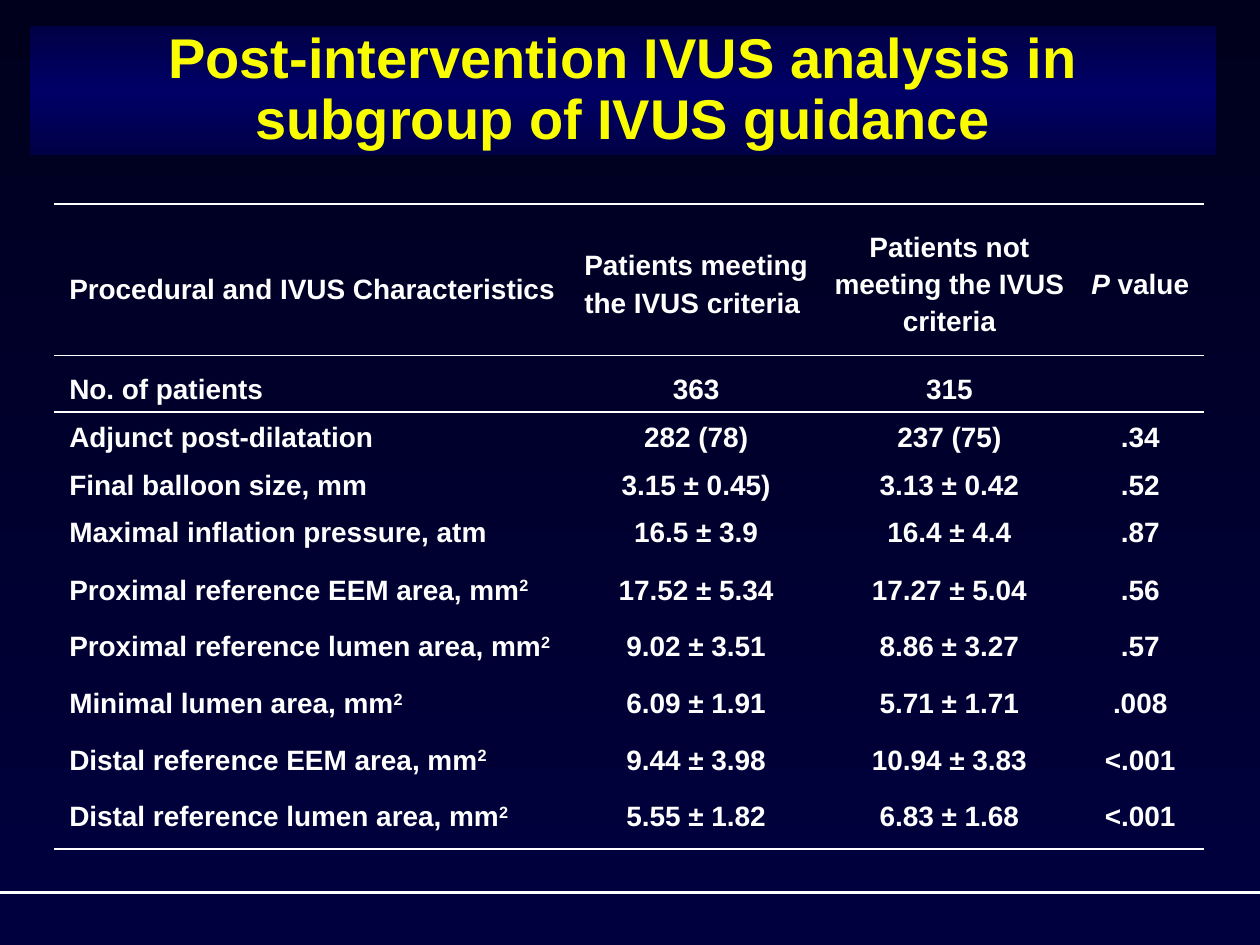
from typing import NamedTuple

from lxml.etree import SubElement
from pptx import Presentation
from pptx.dml.color import RGBColor
from pptx.enum.shapes import MSO_CONNECTOR
from pptx.enum.text import MSO_ANCHOR, MSO_AUTO_SIZE, PP_ALIGN
from pptx.oxml import parse_xml
from pptx.oxml.ns import nsdecls, qn
from pptx.util import Inches, Pt

FONT = "Arial"
WHITE = "FFFFFF"
YELLOW = "FAFD00"
NO_STYLE_NO_GRID = "{2D5ABB26-0587-4C30-8999-92F81FD0307C}"


class Measure(NamedTuple):
    """One body row; area rows have a squared unit and looser spacing."""
    label: str
    meeting: str
    not_meeting: str
    p_value: str
    height: float
    spacing: float = 1.5
    squared: bool = False


HEADERS = [
    "Procedural and IVUS Characteristics",
    "Patients meeting the IVUS criteria ",
    "Patients not meeting the IVUS criteria",
    " value",
]
HEADER_HEIGHT = 1.2
COLUMN_WIDTHS = [4.09, 2.01, 2.01, 1.02]
MEASURES = [
    Measure("No. of patients ", "363", "315", "", 0.45),
    Measure("Adjunct post-dilatation", "282 (78)", "237 (75)", ".34", 0.38, 1.2),
    Measure("Final balloon size, mm", "3.15 ± 0.45)", "3.13 ± 0.42", ".52", 0.38, 1.2),
    Measure("Maximal inflation pressure, atm", "16.5 ± 3.9", "16.4 ± 4.4", ".87", 0.38, 1.2),
    Measure("Proximal reference EEM area, mm", "17.52 ± 5.34", "17.27 ± 5.04", ".56", 0.45, squared=True),
    Measure("Proximal reference lumen area, mm", "9.02 ± 3.51", "8.86 ± 3.27", ".57", 0.45, squared=True),
    Measure("Minimal lumen area, mm", "6.09 ± 1.91", "5.71 ± 1.71", ".008", 0.45, squared=True),
    Measure("Distal reference EEM area, mm", "9.44 ± 3.98", "10.94 ± 3.83", "<.001", 0.45, squared=True),
    Measure("Distal reference lumen area, mm", "5.55 ± 1.82", "6.83 ± 1.68", "<.001", 0.53, squared=True),
]


def rgb(color: str) -> RGBColor:
    return RGBColor.from_string(color)


def set_gradient(fill, element, stops: list[tuple[int, str]]) -> None:
    """Fill top to bottom with stops of (percent, colour)."""
    fill.gradient()
    fill.gradient_angle = 270
    gs_list = next(element.iter(qn("a:gsLst")))
    for old in list(gs_list):
        gs_list.remove(old)
    for percent, color in stops:
        gs = SubElement(gs_list, qn("a:gs"), pos=str(percent * 1000))
        SubElement(gs, qn("a:srgbClr"), val=color)


def add_run(p, text: str, size: float = 16, color: str = WHITE):
    r = p.add_run()
    r.text = text
    r.font.name, r.font.size, r.font.bold = FONT, Pt(size), True
    r.font.color.rgb = rgb(color)
    return r


def format_cell(cell, column: int, spacing: float, edges: str):
    """Set margins, rules (T, B) and paragraph format; return the paragraph."""
    cell.margin_left = Inches(0.12 if column == 0 else 0.03)
    cell.margin_right = cell.margin_top = Inches(0.03)
    cell.margin_bottom = 0
    tc_pr = cell._tc.get_or_add_tcPr()
    for edge in edges:
        tc_pr.append(parse_xml(
            f'<a:ln{edge} {nsdecls("a")} w="{Pt(1)}"><a:solidFill>'
            f'<a:srgbClr val="{WHITE}"/></a:solidFill></a:ln{edge}>'))
    cell.fill.background()
    p = cell.text_frame.paragraphs[0]
    p.line_spacing = spacing
    if column == 0 and spacing == 1.5:
        p.space_after = Pt(10)
    return p


def add_title(s, text: str) -> None:
    sp = s.shapes.title
    sp.left, sp.top, sp.width, sp.height = map(Inches, (0.24, 0.21, 9.41, 1.02))
    set_gradient(sp.fill, sp._element, [(0, "000047"), (50, "000066"), (100, "000047")])
    tf = sp.text_frame
    tf.word_wrap = True
    tf.auto_size = MSO_AUTO_SIZE.SHAPE_TO_FIT_TEXT
    tf.vertical_anchor = MSO_ANCHOR.MIDDLE
    p = tf.paragraphs[0]
    p.alignment, p.line_spacing, p.space_before = PP_ALIGN.CENTER, 0.9, Pt(0)
    add_run(p, text, 32, YELLOW)


def add_footer_rule(s) -> None:
    rule = s.shapes.add_connector(
        MSO_CONNECTOR.STRAIGHT, 0, Inches(7.08), Inches(10), Inches(7.08))
    rule.line.color.rgb = rgb(WHITE)
    rule.line.width = Pt(1.75)
    SubElement(rule._element.spPr, qn("a:effectLst"))


def add_results_table(s) -> None:
    heights = [HEADER_HEIGHT] + [m.height for m in MEASURES]
    frame = s.shapes.add_table(
        len(heights), len(COLUMN_WIDTHS), Inches(0.43), Inches(1.62),
        Inches(sum(COLUMN_WIDTHS)), Inches(sum(heights)))
    table = frame.table
    table.first_row = table.horz_banding = False
    next(table._tbl.iter(qn("a:tableStyleId"))).text = NO_STYLE_NO_GRID
    for column, width in zip(table.columns, COLUMN_WIDTHS):
        column.width = Inches(width)
    for row, height in zip(table.rows, heights):
        row.height = Inches(height)

    # Header row
    for c, text in enumerate(HEADERS):
        cell = table.cell(0, c)
        cell.vertical_anchor = MSO_ANCHOR.MIDDLE
        p = format_cell(cell, c, 1.2 if c else 1.5, "TB")
        p.alignment = PP_ALIGN.CENTER if c else PP_ALIGN.LEFT
        if c == len(HEADERS) - 1:
            add_run(p, "P").font.italic = True
        add_run(p, text)

    # Body rows
    for i, m in enumerate(MEASURES, start=1):
        edges = "T" if i == 1 else "B" if i == len(MEASURES) else ""
        for c, text in enumerate((m.label, m.meeting, m.not_meeting, m.p_value)):
            p = format_cell(table.cell(i, c), c, m.spacing, edges)
            p.alignment = PP_ALIGN.CENTER if c else PP_ALIGN.JUSTIFY
            if text:
                add_run(p, text)
            if c == 0 and m.squared:
                r = add_run(p, "2")
                r._r.get_or_add_rPr().set("baseline", "30000")


def main() -> None:
    prs = Presentation()
    prs.slide_width, prs.slide_height = Inches(10), Inches(7.5)
    s = prs.slides.add_slide(prs.slide_layouts[5])
    set_gradient(s.background.fill, s._element, [(0, "00001D"), (100, "00003E")])
    add_footer_rule(s)
    add_title(s, "Post-intervention IVUS analysis in subgroup of IVUS guidance")
    add_results_table(s)
    prs.save("out.pptx")


if __name__ == "__main__":
    main()
